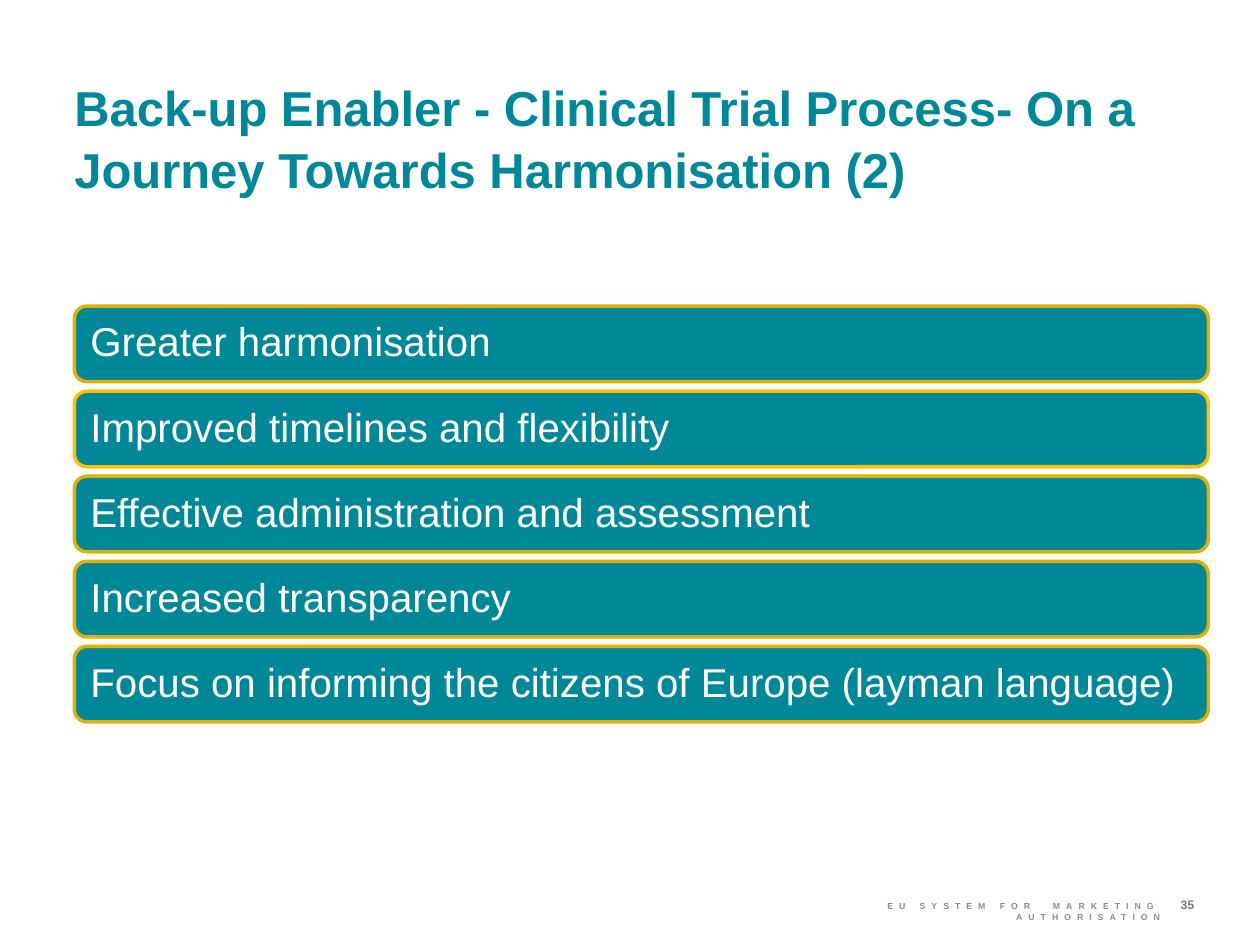
import pptx
import pptx.dml.color
import pptx.enum.shapes
import pptx.enum.text
import pptx.util
from pptx.util import Inches

COLORS = {
    "teal": "008898",
    "gold": "DDB10A",
    "amber": "FFC000",
    "white": "FFFFFF",
    "footer": "8C8C8C",
    "number": "77787B",
}
BENEFITS = [
    ("Greater harmonisation", "gold"),
    ("Improved timelines and flexibility", "amber"),
    ("Effective administration and assessment", "gold"),
    ("Increased transparency", "gold"),
    ("Focus on informing the citizens of Europe (layman language)", "gold"),
]
ALIGN = pptx.enum.text.PP_ALIGN
ANCHOR = pptx.enum.text.MSO_ANCHOR


def rgb(name):
    """Return the named colour."""
    return pptx.dml.color.RGBColor.from_string(COLORS[name])


def write_text(box, text, *, size, color, bold=False, align=ALIGN.LEFT,
               anchor=ANCHOR.TOP, inset=0, line_spacing=1.0, tracking=None):
    """Write one formatted paragraph into a box."""
    frame = box.text_frame
    frame.word_wrap = True
    frame.auto_size = pptx.enum.text.MSO_AUTO_SIZE.NONE
    frame.vertical_anchor = anchor
    frame.margin_left = frame.margin_right = Inches(inset)
    frame.margin_top = frame.margin_bottom = 0
    para = frame.paragraphs[0]
    para.alignment = align
    para.line_spacing = line_spacing
    span = para.add_run()
    span.text = text
    span.font.name = "Arial"
    span.font.size = pptx.util.Pt(size)
    span.font.bold = bold
    span.font.color.rgb = rgb(color)
    if tracking:
        span.font._element.set("spc", str(round(tracking * 100)))


def place_title(page, left, top, width, height):
    """Place the slide title in its placeholder."""
    title = page.shapes.title
    title.left, title.top = Inches(left), Inches(top)
    title.width, title.height = Inches(width), Inches(height)
    write_text(title, "Back-up Enabler - Clinical Trial Process- On a "
               "Journey Towards Harmonisation (2)",
               size=28, color="teal", bold=True, line_spacing=1.05)


def place_benefits(page, left, top, width, height, bar_height=0.6):
    """Stack the benefit bars evenly over the given box."""
    step = (height - bar_height) / (len(BENEFITS) - 1)
    for index, (text, outline) in enumerate(BENEFITS):
        bar = page.shapes.add_shape(
            pptx.enum.shapes.MSO_SHAPE.ROUNDED_RECTANGLE,
            Inches(left), Inches(top + index * step),
            Inches(width), Inches(bar_height))
        bar.shadow.inherit = False
        bar.fill.solid()
        bar.fill.fore_color.rgb = rgb("teal")
        bar.line.color.rgb = rgb(outline)
        bar.line.width = pptx.util.Pt(2)
        write_text(bar, text, size=23, color="white", anchor=ANCHOR.MIDDLE,
                   inset=0.1, line_spacing=0.9)


def place_footer(page, left, top, width, height, number_width=0.43):
    """Place the footer text and the page number at its right."""
    label = page.shapes.add_textbox(
        Inches(left), Inches(top + 0.03), Inches(3.07), Inches(height))
    write_text(label, "EU SYSTEM FOR  MARKETING AUTHORISATION", size=5,
               color="footer", bold=True, align=ALIGN.RIGHT, tracking=3.4)
    number = page.shapes.add_textbox(
        Inches(left + width - number_width), Inches(top),
        Inches(number_width), Inches(height))
    write_text(number, "35", size=7, color="number", bold=True)


def main():
    """Build and save the slide."""
    deck = pptx.Presentation()
    deck.slide_width, deck.slide_height = Inches(10), Inches(7.5)
    page = deck.slides.add_slide(deck.slide_layouts[5])
    place_title(page, 0.59, 0.59, 8.9, 1.11)
    place_benefits(page, 0.59, 2.43, 9, 3.3)
    place_footer(page, 6.14, 7.12, 3.66, 0.17)
    deck.save("out.pptx")


if __name__ == "__main__":
    main()
